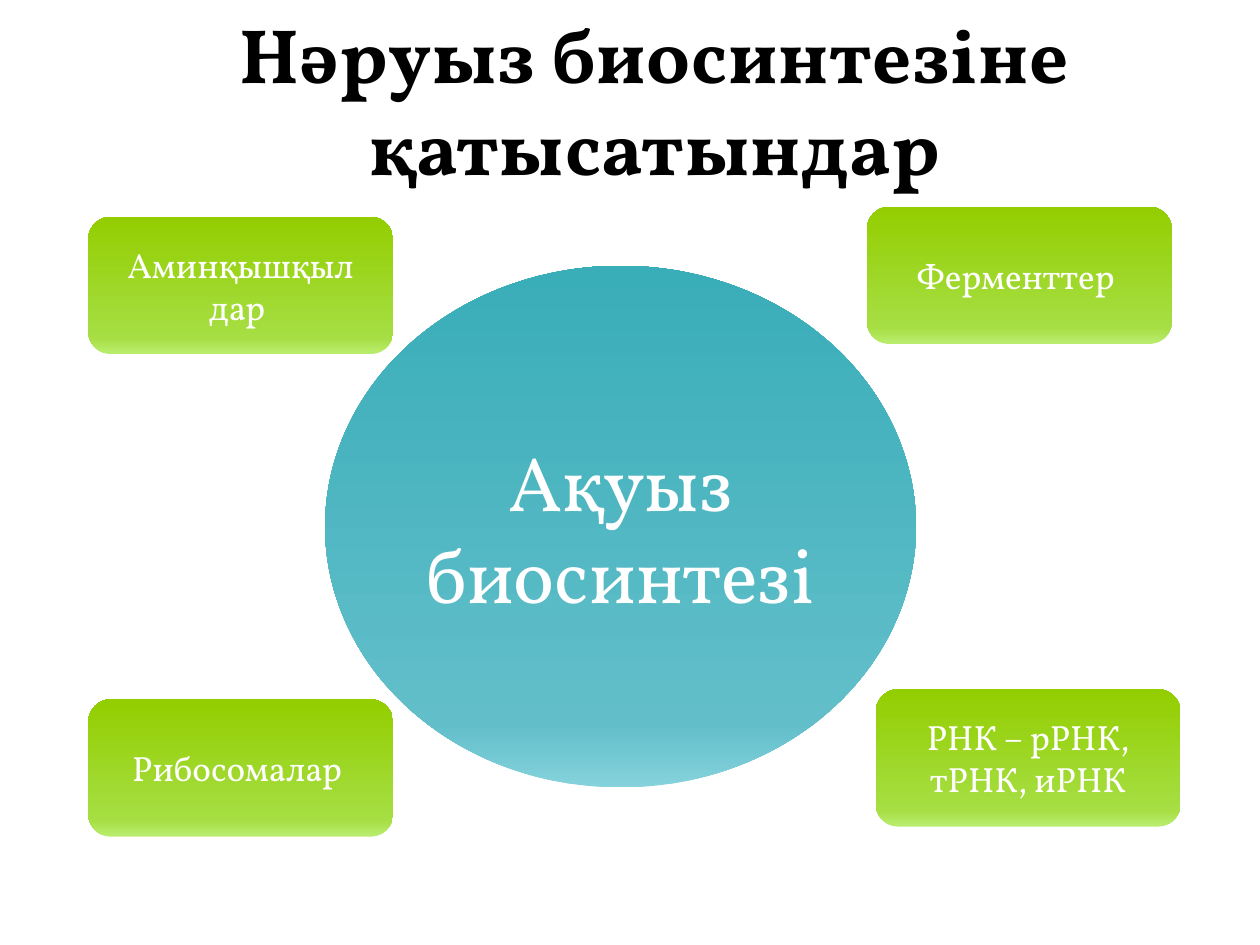
from copy import deepcopy
from pptx import Presentation
from pptx.dml.color import RGBColor
from pptx.enum.shapes import MSO_SHAPE
from pptx.enum.text import MSO_ANCHOR, PP_ALIGN
from pptx.oxml.ns import qn
from pptx.util import Inches, Pt

# Content
TITLE = "Нәруыз биосинтезіне қатысатындар"
CENTRE = "Ақуыз биосинтезі "
PARTS = [  # left, top, lines
    (0.7, 1.72, ["Аминқышқыл", "дар "]),
    (6.88, 1.64, ["Ферменттер "]),
    (0.7, 5.55, ["Рибосомалар "]),
    (6.95, 5.47, ["РНК – рРНК, тРНК, иРНК"]),
]
CARD = (2.42, 1.09)

# Look
HEX = {
    "black": "000000", "white": "FFFFFF",
    "green": ("BAED6F", "A6DE43", "93CE00"),
    "teal": ("85D2DC", "62BFCA", "39ADB8"),
}
STOPS = (0, 0.12, 1)
BASE = {"name": "Vollkorn", "bold": False}


def write(shape, lines, size, tint, **more):
    frame = shape.text_frame
    frame.word_wrap = True
    frame.text = "\n".join(lines)
    for para in frame.paragraphs:
        para.alignment = PP_ALIGN.CENTER
        font = para.runs[0].font
        for key, val in {**BASE, "size": Pt(size), **more}.items():
            setattr(font, key, val)
        font.color.rgb = RGBColor.from_string(HEX[tint])


def shade(shape, tints):
    fill = shape.fill
    fill.gradient()
    fill.gradient_angle = 90
    stops = shape.element.spPr.find(qn("a:gradFill")).find(qn("a:gsLst"))
    stops.insert(1, deepcopy(stops[0]))
    for stop, pos, tint in zip(fill.gradient_stops, STOPS, tints):
        stop.position = pos
        stop.color.rgb = RGBColor.from_string(tint)


def draw(kind, box, tints, lines, size):
    shape = slide.shapes.add_shape(kind, *map(Inches, box))
    shape.shadow.inherit = False
    shape.line.fill.background()
    shade(shape, HEX[tints])
    write(shape, lines, size, "white")
    shape.text_frame.vertical_anchor = MSO_ANCHOR.MIDDLE


deck = Presentation()
deck.slide_width, deck.slide_height = Inches(10), Inches(7.5)
slide = deck.slides.add_slide(deck.slide_layouts[6])

# Title
head = slide.shapes.add_textbox(*map(Inches, (1.06, 0, 8.28, 1.58)))
write(head, [TITLE], 44, "black", bold=True)
run = head.text_frame.paragraphs[0].runs[0]
run.font._element.set("spc", "50")

# Corner cards, then the central ellipse on top
for left, top, lines in PARTS:
    draw(MSO_SHAPE.ROUNDED_RECTANGLE, (left, top, *CARD), "green", lines, 20)
draw(MSO_SHAPE.OVAL, (2.58, 2.11, 4.69, 4.14), "teal", [CENTRE], 44)

deck.save("out.pptx")
